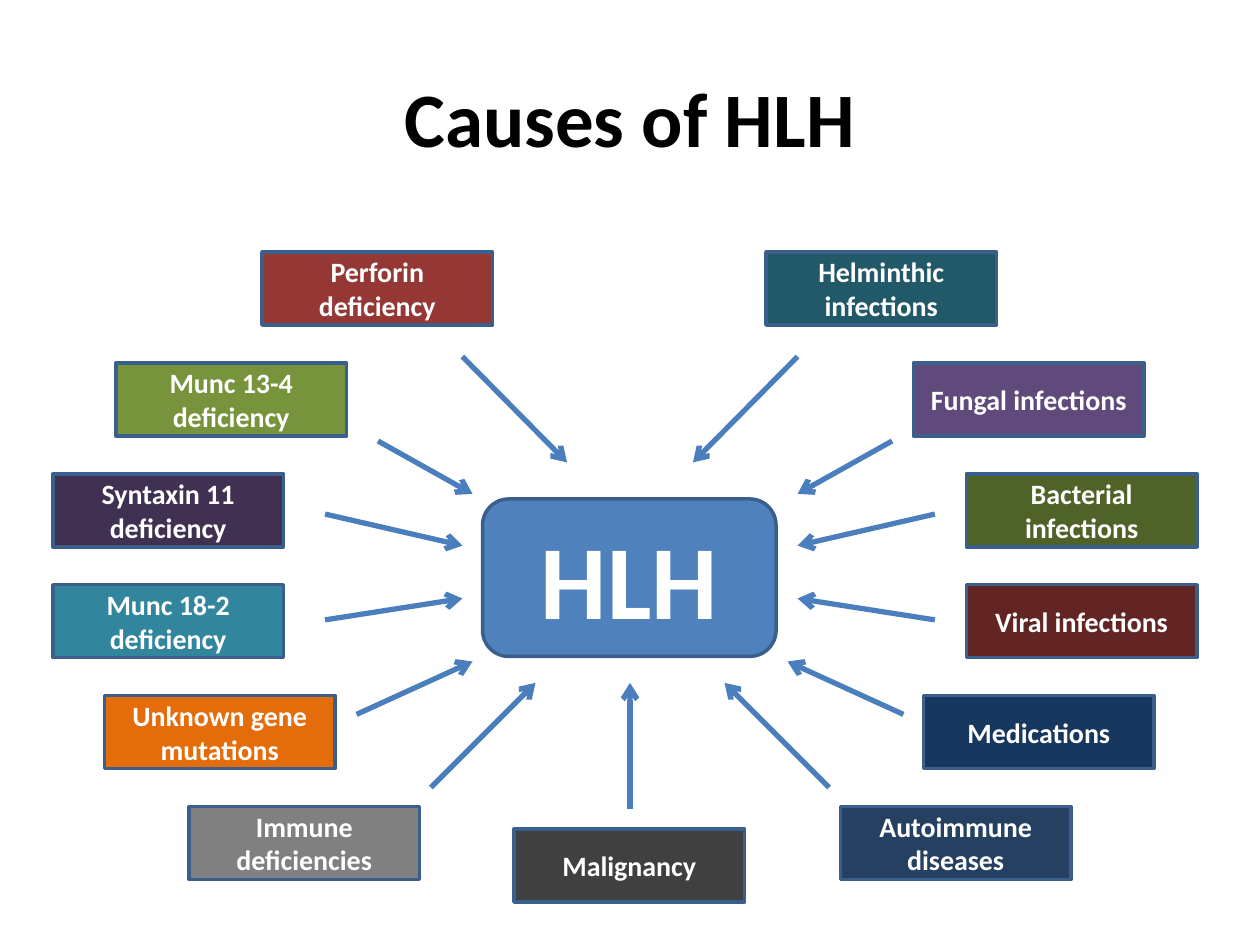
from dataclasses import dataclass

from lxml import etree
from pptx import Presentation
from pptx.dml.color import RGBColor
from pptx.enum import shapes, text
from pptx.oxml.ns import qn
from pptx.util import Inches, Pt


@dataclass(frozen=True)
class Theme:
    font: str = "Calibri"
    title_size: int = 44
    hub_size: int = 60
    cause_size: int = 16
    ink: str = "000000"
    paper: str = "FFFFFF"
    hub_fill: str = "4F81BD"
    border: str = "3A5F8C"
    arrow: str = "4B7EBC"
    border_width: float = 2
    arrow_width: float = 3


CAUSE_WIDTH, CAUSE_HEIGHT = 1.83, 0.58
FIRST_ROW, ROW_STEP = 2, 0.88

# Each row: (label, fill, left edge, arrow start, arrow end)
GENETIC_SIDE = [
    ("Perforin deficiency", "953735", 2.08, (3.67, 2.83), (4.5, 3.67)),
    ("Munc 13-4 deficiency", "77933C", 0.92, (3, 3.5), (3.75, 3.92)),
    ("Syntaxin 11 deficiency", "403152", 0.42, (2.58, 4.08), (3.67, 4.33)),
    ("Munc 18-2 deficiency", "31859C", 0.42, (2.58, 4.92), (3.67, 4.75)),
    ("Unknown gene mutations", "E46C0A", 0.83, (2.83, 5.67), (3.75, 5.25)),
    ("Immune deficiencies", "808080", 1.5, (3.42, 6.25), (4.25, 5.42)),
]
ACQUIRED_SIDE = [
    ("Helminthic infections", "215968", 6.08, (6.33, 2.83), (5.5, 3.67)),
    ("Fungal infections", "604A7B", 7.25, (7.08, 3.5), (6.33, 3.92)),
    ("Bacterial infections", "4F6228", 7.67, (7.42, 4.08), (6.33, 4.33)),
    ("Viral infections", "632523", 7.67, (7.42, 4.92), (6.33, 4.75)),
    ("Medications", "17375E", 7.33, (7.17, 5.67), (6.25, 5.25)),
    ("Autoimmune diseases", "254061", 6.67, (6.58, 6.25), (5.75, 5.42)),
]


class Diagram:
    def __init__(self, slide, theme):
        self.slide = slide
        self.theme = theme

    def label(self, shape, words, size, color):
        frame = shape.text_frame
        frame.word_wrap = True
        frame.vertical_anchor = text.MSO_ANCHOR.MIDDLE
        paragraph = frame.paragraphs[0]
        paragraph.text = words
        paragraph.alignment = text.PP_ALIGN.CENTER
        font = paragraph.font
        font.name, font.size, font.bold = self.theme.font, Pt(size), True
        font.color.rgb = RGBColor.from_string(color)

    def title(self, words, *box):
        heading = self.slide.shapes.add_textbox(*map(Inches, box))
        self.label(heading, words, self.theme.title_size, self.theme.ink)

    def block(self, preset, words, size, fill, *box):
        block = self.slide.shapes.add_shape(preset, *map(Inches, box))
        block.shadow.inherit = False
        block.fill.solid()
        block.fill.fore_color.rgb = RGBColor.from_string(fill)
        block.line.color.rgb = RGBColor.from_string(self.theme.border)
        block.line.width = Pt(self.theme.border_width)
        self.label(block, words, size, self.theme.paper)

    def hub(self, words, *box):
        self.block(shapes.MSO_SHAPE.ROUNDED_RECTANGLE, words,
                   self.theme.hub_size, self.theme.hub_fill, *box)

    def cause(self, words, fill, left, top):
        self.block(shapes.MSO_SHAPE.RECTANGLE, words, self.theme.cause_size,
                   fill, left, top, CAUSE_WIDTH, CAUSE_HEIGHT)

    def arrow(self, start, end):
        arrow = self.slide.shapes.add_connector(
            shapes.MSO_CONNECTOR.STRAIGHT, *map(Inches, (*start, *end)))
        arrow.line.color.rgb = RGBColor.from_string(self.theme.arrow)
        arrow.line.width = Pt(self.theme.arrow_width)
        properties = arrow._element.spPr
        outline = properties.find(qn("a:ln"))
        etree.SubElement(outline, qn("a:tailEnd"), type="arrow")
        etree.SubElement(properties, qn("a:effectLst"))


def main():
    deck = Presentation()
    deck.slide_width, deck.slide_height = Inches(10), Inches(7.5)
    diagram = Diagram(deck.slides.add_slide(deck.slide_layouts[6]), Theme())

    diagram.title("Causes of HLH", 0.5, 0.3, 9, 1.25)
    diagram.hub("HLH", 3.83, 3.96, 2.33, 1.25)
    for side in (GENETIC_SIDE, ACQUIRED_SIDE):
        for row, (words, fill, left, start, end) in enumerate(side):
            diagram.cause(words, fill, left, FIRST_ROW + row * ROW_STEP)
            diagram.arrow(start, end)
    diagram.cause("Malignancy", "404040", 4.08, 6.58)
    diagram.arrow((5, 6.42), (5, 5.42))

    deck.save("out.pptx")


if __name__ == "__main__":
    main()
